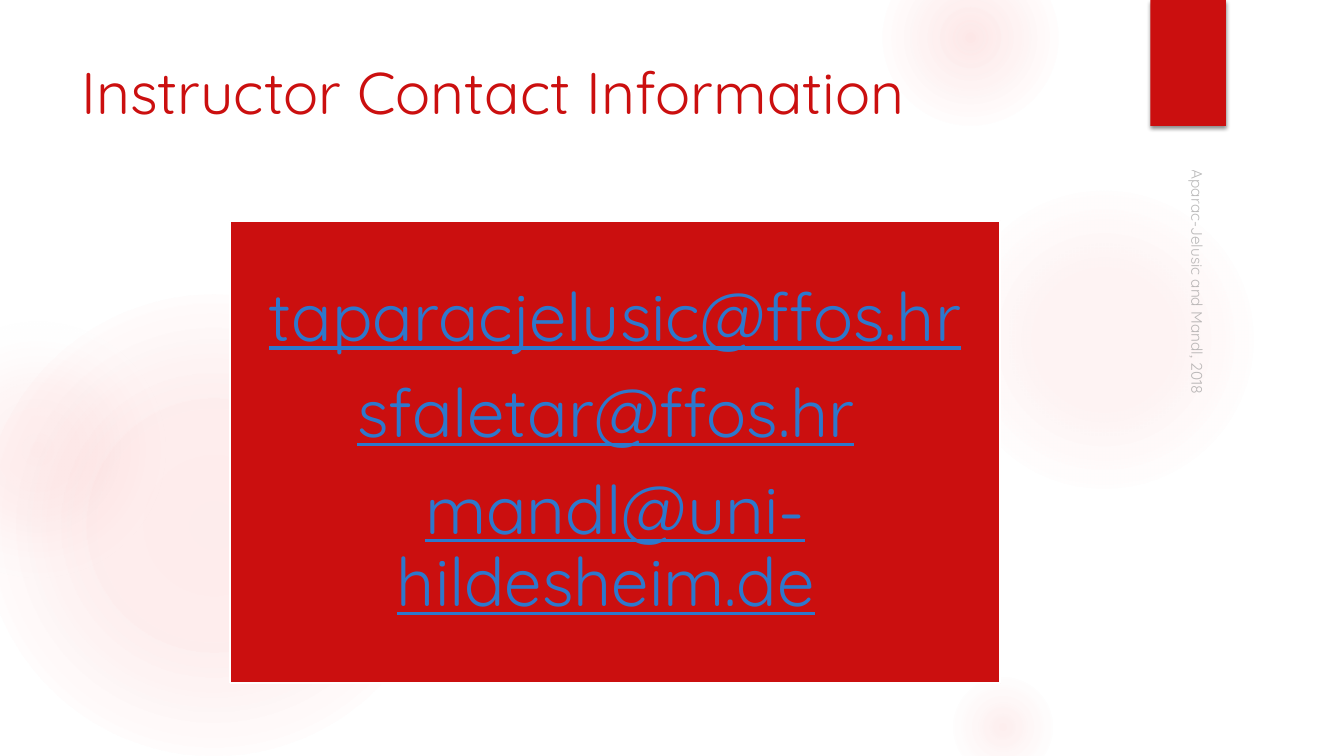
from dataclasses import dataclass, field
from typing import Any

from pptx import Presentation
from pptx.dml.color import RGBColor
from pptx.enum.shapes import MSO_SHAPE
from pptx.enum.text import MSO_ANCHOR, PP_ALIGN
from pptx.oxml import parse_xml
from pptx.oxml.ns import nsdecls, qn
from pptx.util import Inches, Pt

HUES = {"red": "CB0F0F", "glow": "F35C5C", "pale": "F3F3F3", "white": "FFFFFF",
        "link": "2D78CC", "gray": "8C8C8C", "black": "000000"}
FACE = "Quicksand"


@dataclass
class Glow:
    """A soft round spot: place, size, and stops of (position, opacity)."""
    left: float
    top: float
    size: float
    stops: list[tuple[int, int]]
    edge: str = "glow"


@dataclass
class Note:
    """A text box: place, lines of (text, font format) runs, and formats."""
    area: tuple[float, float, float, float]
    lines: list[list[tuple[str, dict[str, Any]]]]
    frame: dict[str, Any] = field(default_factory=dict)
    para: dict[str, Any] = field(default_factory=dict)
    gap: float = 0
    turn: float = 0


GLOWS = [
    Glow(-0.17, 2.92, 4.58, [(0, 11), (36, 10), (75, 0)]),
    Glow(-0.92, 3.17, 2.58, [(0, 8), (36, 5), (71, 0)], "pale"),
    Glow(9.41, 1.83, 3.08, [(0, 7), (36, 6), (69, 0)]),
    Glow(8.75, -0.5, 1.75, [(0, 14), (36, 7), (73, 0)]),
    Glow(9.41, 6.67, 1.08, [(0, 10), (31, 5), (66, 0)]),
]

PANEL = (2.28, 2.19, 7.64, 4.59)
LINK = {"size": Pt(48), "hue": "link", "underline": True}
SPACE = (" ", {"size": Pt(48), "hue": "white"})
SIDES = ("margin_left", "margin_top", "margin_right", "margin_bottom")

TITLE = Note((0.71, 0.5, 10.29, 1.53),
             [[("Instructor Contact Information", {"size": Pt(42), "hue": "red"})]])
MAILS = Note(PANEL,
             [[("taparacjelusic@ffos.hr", LINK)],
              [("sfaletar@ffos.hr", LINK), SPACE],
              [("mandl@uni-hildesheim.de", LINK), SPACE]],
             {"vertical_anchor": MSO_ANCHOR.MIDDLE} | dict.fromkeys(SIDES, Inches(0.2)),
             {"alignment": PP_ALIGN.CENTER, "line_spacing": 0.9}, gap=17)
CREDIT = Note((9.79, 3.53, 4.22, 0.33),
              [[("Aparac-Jelusic and Mandl, 2018", {"size": Pt(11), "hue": "gray"})]],
              {"vertical_anchor": MSO_ANCHOR.BOTTOM}, turn=90)


def apply(item: Any, values: dict[str, Any]) -> None:
    """Set each format value on the item."""
    for name, value in values.items():
        setattr(item, name, value)


def tint(hue: str, alpha: int) -> str:
    """Give the XML of a colour with an opacity in percent."""
    return f'<a:srgbClr val="{HUES[hue]}"><a:alpha val="{alpha * 1000}"/></a:srgbClr>'


def block(slide: Any, kind: MSO_SHAPE, area: tuple, hue: str) -> Any:
    """Add a plain filled shape without line or shadow."""
    shape = slide.shapes.add_shape(kind, *map(Inches, area))
    shape.fill.solid()
    shape.fill.fore_color.rgb = RGBColor.from_string(HUES[hue])
    shape.line.fill.background()
    shape.shadow.inherit = False
    return shape


def shine(slide: Any, glow: Glow) -> None:
    """Add a spot that fades from its centre."""
    area = (glow.left, glow.top, glow.size, glow.size)
    props = block(slide, MSO_SHAPE.OVAL, area, "glow").element.spPr
    hues = ("glow", "glow", glow.edge)
    stops = "".join(f'<a:gs pos="{spot * 1000}">{tint(hue, alpha)}</a:gs>'
                    for hue, (spot, alpha) in zip(hues, glow.stops))
    fade = parse_xml(
        f'<a:gradFill {nsdecls("a")} rotWithShape="1"><a:gsLst>{stops}</a:gsLst>'
        '<a:path path="circle"><a:fillToRect l="50000" t="50000" r="50000" b="50000"/>'
        '</a:path></a:gradFill>')
    props.replace(props.find(qn("a:solidFill")), fade)


def shade(shape: Any) -> None:
    """Cast a soft shadow below the shape."""
    props = shape.element.spPr
    cast = parse_xml(
        f'<a:effectLst {nsdecls("a")}><a:outerShdw blurRad="{Pt(3)}" dist="{Pt(2)}" '
        f'dir="5400000" rotWithShape="0">{tint("black", 45)}</a:outerShdw></a:effectLst>')
    props.replace(props.find(qn("a:effectLst")), cast)


def write(slide: Any, note: Note) -> Any:
    """Add a text box with its formatted lines."""
    box = slide.shapes.add_textbox(*map(Inches, note.area))
    box.rotation = note.turn
    frame = box.text_frame
    apply(frame, {"word_wrap": True} | note.frame)
    for index, line in enumerate(note.lines):
        para = frame.add_paragraph() if index else frame.paragraphs[0]
        apply(para, note.para | {"space_after": Pt(note.gap)})
        for text, style in line:
            run = para.add_run()
            run.text = text
            looks = {key: value for key, value in style.items() if key != "hue"}
            apply(run.font, {"name": FACE} | looks)
            run.font.color.rgb = RGBColor.from_string(HUES[style["hue"]])
    return box


def main() -> None:
    """Build and save the contact slide."""
    deck = Presentation()
    apply(deck, {"slide_width": Inches(13.33), "slide_height": Inches(7.5)})
    slide = deck.slides.add_slide(deck.slide_layouts[6])
    for glow in GLOWS:
        shine(slide, glow)
    shade(block(slide, MSO_SHAPE.RECTANGLE, (11.41, 0, 0.75, 1.25), "red"))
    write(slide, TITLE)
    panel = block(slide, MSO_SHAPE.RECTANGLE, PANEL, "red")
    panel.line.color.rgb = RGBColor.from_string(HUES["white"])
    panel.line.width = Pt(1.5)
    write(slide, MAILS)
    credit = write(slide, CREDIT)
    for color in credit.element.iter(qn("a:srgbClr")):
        color.append(parse_xml(f'<a:alpha {nsdecls("a")} val="60000"/>'))
    deck.save("out.pptx")


if __name__ == "__main__":
    main()
